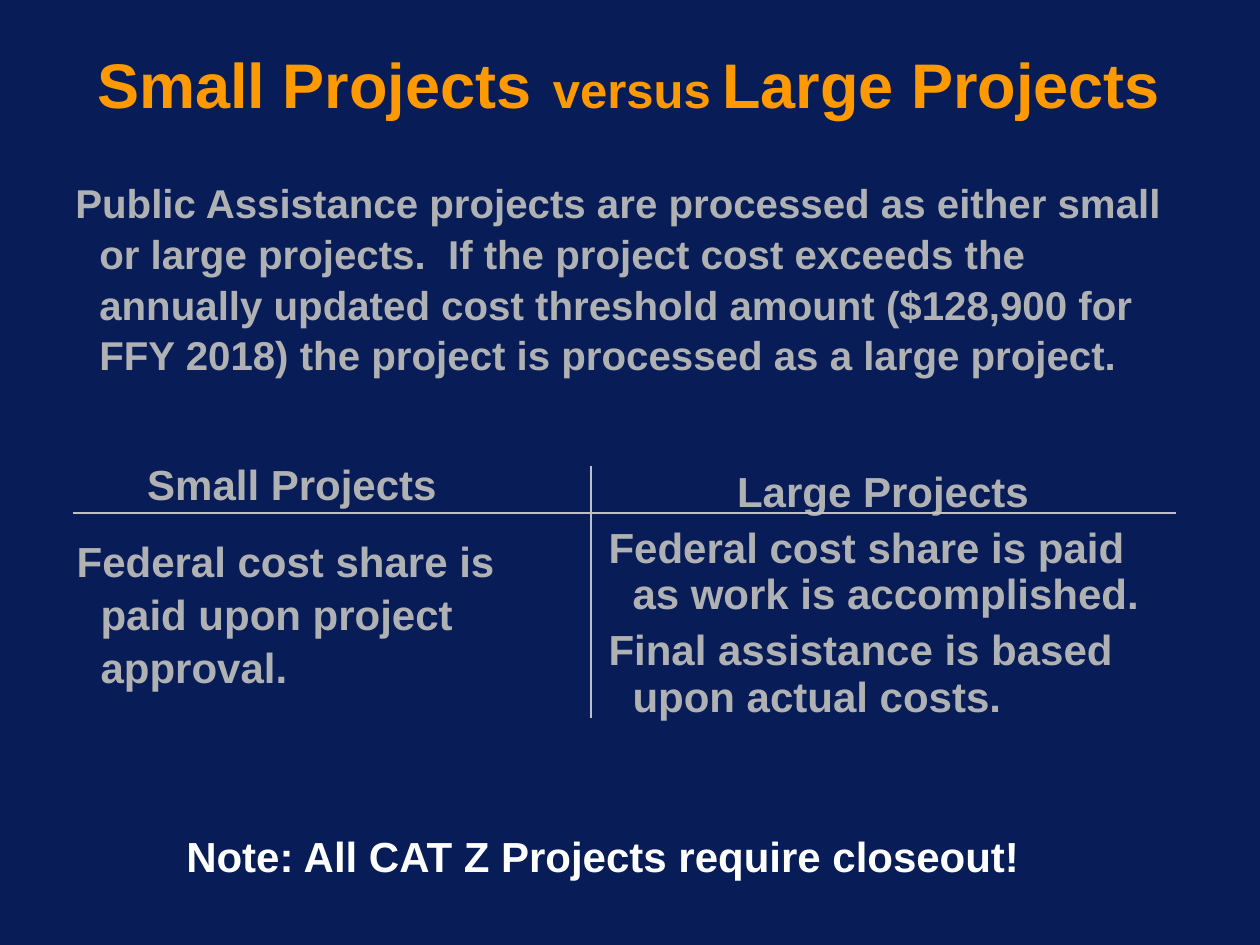
"""Build a slide comparing small and large public assistance projects."""
from pptx import Presentation
from pptx.dml.color import RGBColor
from pptx.enum.text import MSO_ANCHOR as Anchor, MSO_AUTO_SIZE as Fit, PP_ALIGN as Align
from pptx.oxml.ns import qn
from pptx.util import Inches, Pt
from lxml import etree

NAVY = RGBColor(0x08, 0x1D, 0x58)
ORANGE = RGBColor(0xFF, 0x99, 0x00)
GREY = RGBColor(0xB0, 0xB1, 0xB3)
SILVER = RGBColor(0xC0, 0xC0, 0xC0)
WHITE = RGBColor(0xFF, 0xFF, 0xFF)


def place(box, left, top, width, height):
    box.left, box.top = Inches(left), Inches(top)
    box.width, box.height = Inches(width), Inches(height)
    frame = box.text_frame
    frame.word_wrap = True
    frame.auto_size = Fit.NONE
    frame.vertical_anchor = Anchor.TOP
    return frame


def write(para, text, size, color):
    run = para.add_run()
    run.text = text
    font = run.font
    font.name, font.size, font.bold = "Arial", Pt(size), True
    font.color.rgb = color


deck = Presentation()
deck.slide_width, deck.slide_height = Inches(10), Inches(7.5)
slide = deck.slides.add_slide(deck.slide_layouts[1])
slide.background.fill.solid()
slide.background.fill.fore_color.rgb = NAVY
shapes = slide.shapes

title = place(shapes.title, 0.35, 0.31, 9.28, 0.83).paragraphs[0]
title.alignment = Align.CENTER
title.line_spacing = 0.85
for text, size in [("Small Projects", 36), (" ", 44), ("versus", 28),
                   (" ", 24), ("Large Projects", 36)]:
    write(title, text, size, ORANGE)

intro = ("Public Assistance projects are processed as either small or large projects.  "
         "If the project cost exceeds the annually updated cost threshold amount "
         "($128,900 for FFY 2018) the project is processed as a large project.")
small = ["Small Projects", "Federal cost share is paid upon project approval."]
large = ["Large Projects", "Federal cost share is paid as work is accomplished.",
         "Final assistance is based upon actual costs."]

blocks = [
    (shapes.add_textbox(0, 0, 0, 0), (0.51, 3.57, 4.12, 2.28), small, 24, 1.05, 14, 0.56),
    (slide.placeholders[1], (4.73, 3.68, 4.62, 2.26), large, 24, 0.93, 5, 1.02),
    (shapes.add_textbox(0, 0, 0, 0), (0.5, 1.35, 9, 2.18), [intro], 23, 1.05, 0, 0),
]
for box, area, lines, size, pitch, gap, head in blocks:
    frame = place(box, *area)
    for i, text in enumerate(lines):
        para = frame.paragraphs[0] if i == 0 else frame.add_paragraph()
        inset = head if i == 0 and head else 0.19
        props = para._p.get_or_add_pPr()
        props.set("marL", str(Inches(inset)))
        props.set("indent", str(0 if inset == head else -Inches(inset)))
        etree.SubElement(props, qn("a:buNone"))
        para.line_spacing = pitch
        para.space_before = Pt(gap if i else 0)
        write(para, text, size, GREY)

for ends in [(0.58, 4.07, 9.33, 4.07), (4.69, 3.7, 4.69, 5.7)]:
    rule = shapes.add_connector(1, *map(Inches, ends))
    rule.line.color.rgb = SILVER
    rule.line.width = Pt(1.25)
    etree.SubElement(rule._element.spPr, qn("a:effectLst"))

note = place(shapes.add_textbox(0, 0, 0, 0), 1.38, 6.54, 6.85, 0.5)
write(note.paragraphs[0], "Note: All CAT Z Projects require closeout!", 24, WHITE)

deck.save("out.pptx")
